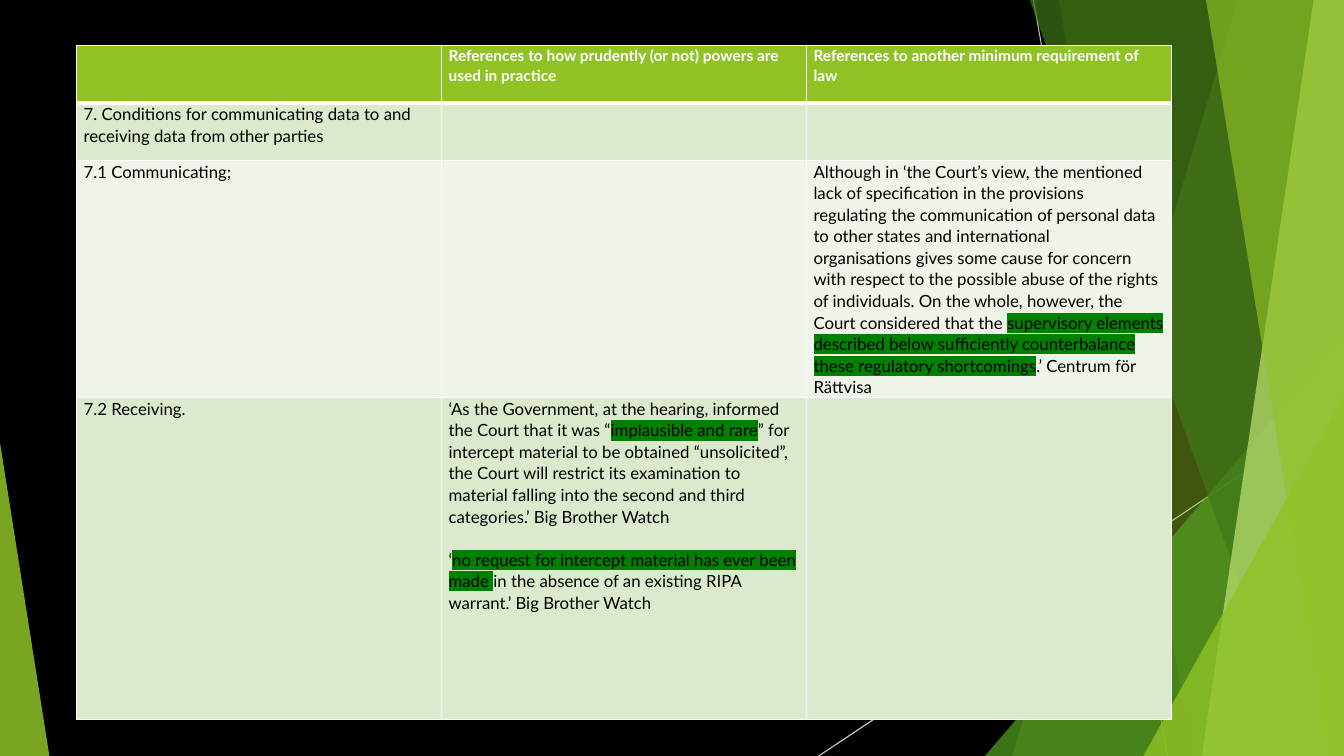
from dataclasses import dataclass

from lxml.etree import Element, SubElement
from pptx import Presentation
from pptx.dml.color import RGBColor
from pptx.enum.shapes import MSO_CONNECTOR, MSO_SHAPE
from pptx.oxml.ns import qn
from pptx.util import Inches, Pt

COLS, ROWS = 1333, 750
WIDE, HIGH = Inches(13.33), Inches(7.5)
TIE, HARD = "~", chr(160)


@dataclass(frozen=True)
class Theme:
    """Colours, font and type sizes of the slide."""
    back: str = "000000"
    ink: str = "000000"
    white: str = "FFFFFF"
    green: str = "90C226"
    leaf: str = "54A021"
    moss: str = "3F7819"
    lime: str = "C0E474"
    band: str = "DBE9CD"
    pale: str = "EEF4E8"
    mark: str = "008000"
    font: str = "Lato"
    head: float = 11
    body: float = 12
    lead: float = 1.07
    gap: float = 15.4


THEME = Theme()

LINES = [((1025, 0), (1158, ROWS), "BFBFBF"), ((COLS, 403), (812, ROWS), "D9D9D9")]
BACK = [(1228, 1004, THEME.green, 30), (1050, 1183, THEME.green, 20)]
FRONT = [(1021, 1291, THEME.moss, 70), (1303, 1192, THEME.lime, 70),
         (1196, 1318, THEME.green, 65)]

GRID = [
    ["", "References to how prudently (or not) powers are used in practice",
     "References to another minimum requirement of law"],
    ["7. Conditions~for communicating data to and receiving data from other parties", "", ""],
    ["7.1 Communicating;", "",
     "Although in ‘the Court’s view,~the mentioned lack of specification~in the provisions "
     "regulating~the communication of personal data to other states~and international "
     "organisations~gives some cause for concern with respect to the possible~abuse of the "
     "rights of individuals.~On the whole, however, the Court considered that the "
     "|supervisory elements described below sufficiently counterbalance these~regulatory "
     "shortcomings|.’ Centrum för Rättvisa"],
    ["7.2 Receiving.",
     "‘As the Government, at the hearing, informed the Court that it was “|implausible and "
     "rare|” for intercept material to be obtained “unsolicited”, the Court will restrict its "
     "examination to material falling into the second and third categories.’ Big Brother Watch"
     "\n‘|no request for intercept material has ever been made |in the absence of an existing "
     "RIPA warrant.’ Big Brother Watch", ""],
]
FILLS = [THEME.green, THEME.band, THEME.pale, THEME.band]
TALL = [57, 57, 225, 320]


def col(n):
    """Turn grid columns into a length."""
    return round(WIDE * n / COLS)


def row(n):
    """Turn grid rows into a length."""
    return round(HIGH * n / ROWS)


def tint(shape, hue, share):
    """Give a shape a sheer fill with no line or shadow."""
    shape.shadow.inherit = False
    shape.fill.solid()
    shape.fill.fore_color.rgb = RGBColor.from_string(hue)
    clear = shape.element.spPr.find(".//" + qn("a:srgbClr"))
    SubElement(clear, qn("a:alpha"), val=str(share * 1000))
    shape.line.fill.background()


def ray(slide, start, end, hue):
    """Draw a thin line between two grid points."""
    line = slide.shapes.add_connector(
        MSO_CONNECTOR.STRAIGHT, col(start[0]), row(start[1]), col(end[0]), row(end[1]))
    line.line.color.rgb = RGBColor.from_string(hue)
    line.line.width = Pt(0.75)
    SubElement(line.element.spPr, qn("a:effectLst"))


def shard(slide, top, foot, hue, share):
    """Draw a slanted panel that reaches the right edge."""
    form = slide.shapes.build_freeform(col(top), row(-1))
    form.add_line_segments([(col(x), row(y)) for x, y in
                            ((COLS, -1), (COLS, ROWS), (foot, ROWS))])
    tint(form.convert_to_shape(), hue, share)


def wedge(slide, left, right, top, tip, hue, share):
    """Draw a right triangle that stands on the bottom edge."""
    shape = slide.shapes.add_shape(MSO_SHAPE.ISOSCELES_TRIANGLE, col(left), row(top),
                                   col(right - left), row(ROWS - top))
    shape.adjustments[0] = tip
    tint(shape, hue, share)


def edge(cell, sides):
    """Put white lines of the given widths on the sides of a cell."""
    props = cell._tc.get_or_add_tcPr()
    for spot, (side, width) in enumerate(sides.items()):
        line = Element(qn(f"a:ln{side}"), w=str(Pt(width)))
        fill = SubElement(line, qn("a:solidFill"))
        SubElement(fill, qn("a:srgbClr"), val=THEME.white)
        props.insert(spot, line)


def style(run, head, marked):
    """Set the font of a run and mark it if asked."""
    font = run.font
    font.name, font.bold = THEME.font, head
    font.size = Pt(THEME.head if head else THEME.body)
    font.color.rgb = RGBColor.from_string(THEME.white if head else THEME.ink)
    if marked:
        light = Element(qn("a:highlight"))
        SubElement(light, qn("a:srgbClr"), val=THEME.mark)
        font._element.find(qn("a:solidFill")).addnext(light)


def write(cell, text, head):
    """Fill a cell with text whose odd parts are marked."""
    cell.margin_left = cell.margin_right = col(7)
    cell.margin_top = cell.margin_bottom = 0
    parts = [part.split("|") for part in text.replace(TIE, HARD).split("\n")]
    cell.text_frame.text = "\n".join(part[0] for part in parts)
    for spot, (para, part) in enumerate(zip(cell.text_frame.paragraphs, parts)):
        para.line_spacing = THEME.lead
        if spot:
            para.space_before = Pt(THEME.gap)
        for piece in part[1:]:
            para.add_run().text = piece
        for turn, run in enumerate(para.runs):
            style(run, head, turn % 2 == 1)


def quotes(slide):
    """Build the table of court quotes."""
    table = slide.shapes.add_table(len(GRID), len(GRID[0]), col(76), row(45),
                                   col(1086), row(sum(TALL))).table
    table.horz_banding = False
    for line, tall in zip(table.rows, TALL):
        line.height = row(tall)
    for y, texts in enumerate(GRID):
        sides = {"L": 1, "R": 1, "T": 3 if y == 1 else 1, "B": 1 if y else 3}
        for x, text in enumerate(texts):
            cell = table.cell(y, x)
            cell.fill.solid()
            cell.fill.fore_color.rgb = RGBColor.from_string(FILLS[y])
            edge(cell, sides)
            write(cell, text, y == 0)


def main():
    """Build the slide and save it."""
    deck = Presentation()
    deck.slide_width, deck.slide_height = WIDE, HIGH
    slide = deck.slides.add_slide(deck.slide_layouts[6])
    slide.background.fill.solid()
    slide.background.fill.fore_color.rgb = RGBColor.from_string(THEME.back)
    for line in LINES:
        ray(slide, *line)
    for panel in BACK:
        shard(slide, *panel)
    wedge(slide, 977, COLS, 333, 1, THEME.leaf, 72)
    for panel in FRONT:
        shard(slide, *panel)
    wedge(slide, 1134, COLS, 393, 1, THEME.green, 80)
    wedge(slide, 0, 49, 439, 0, THEME.green, 85)
    quotes(slide)
    deck.save("out.pptx")


if __name__ == "__main__":
    main()
